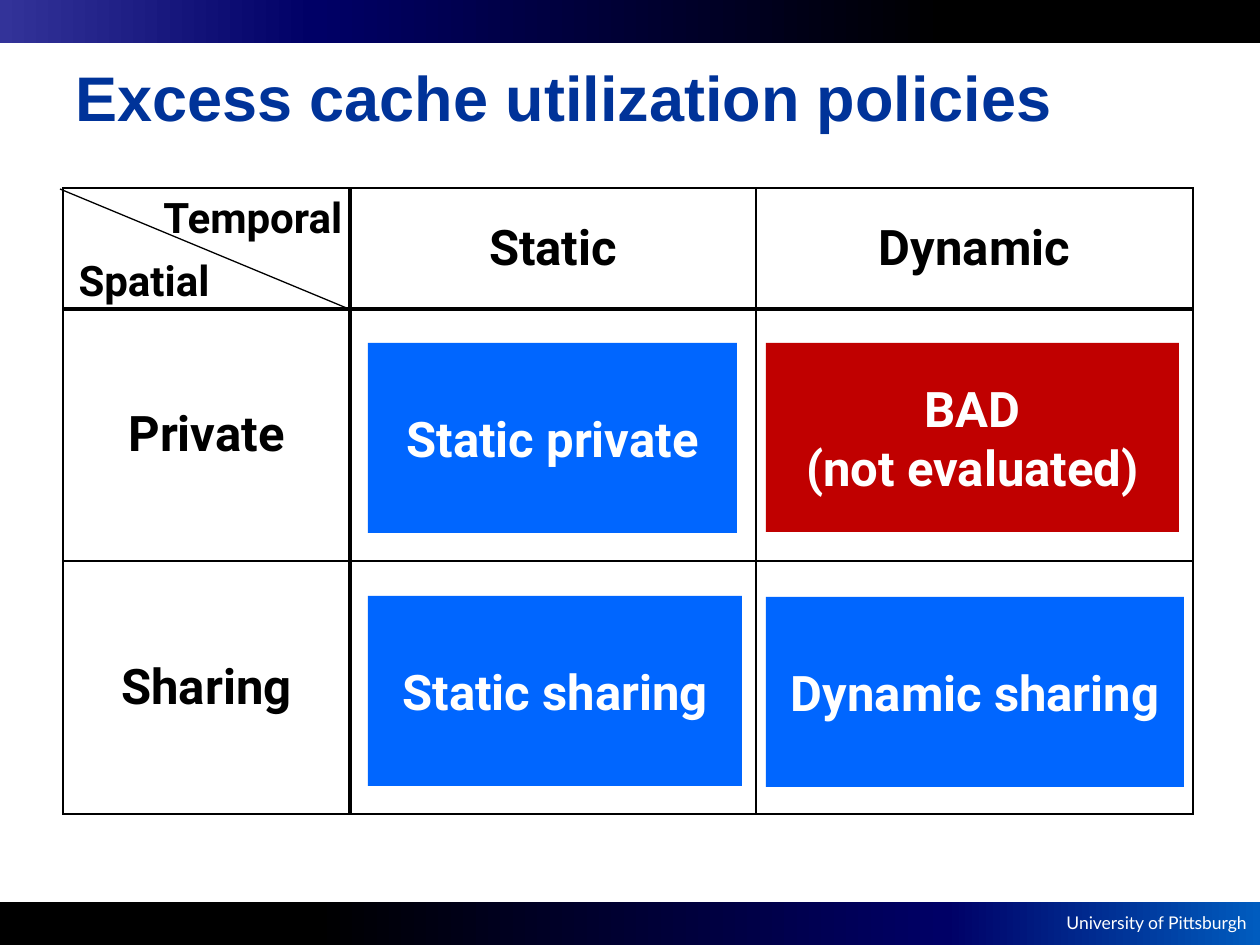
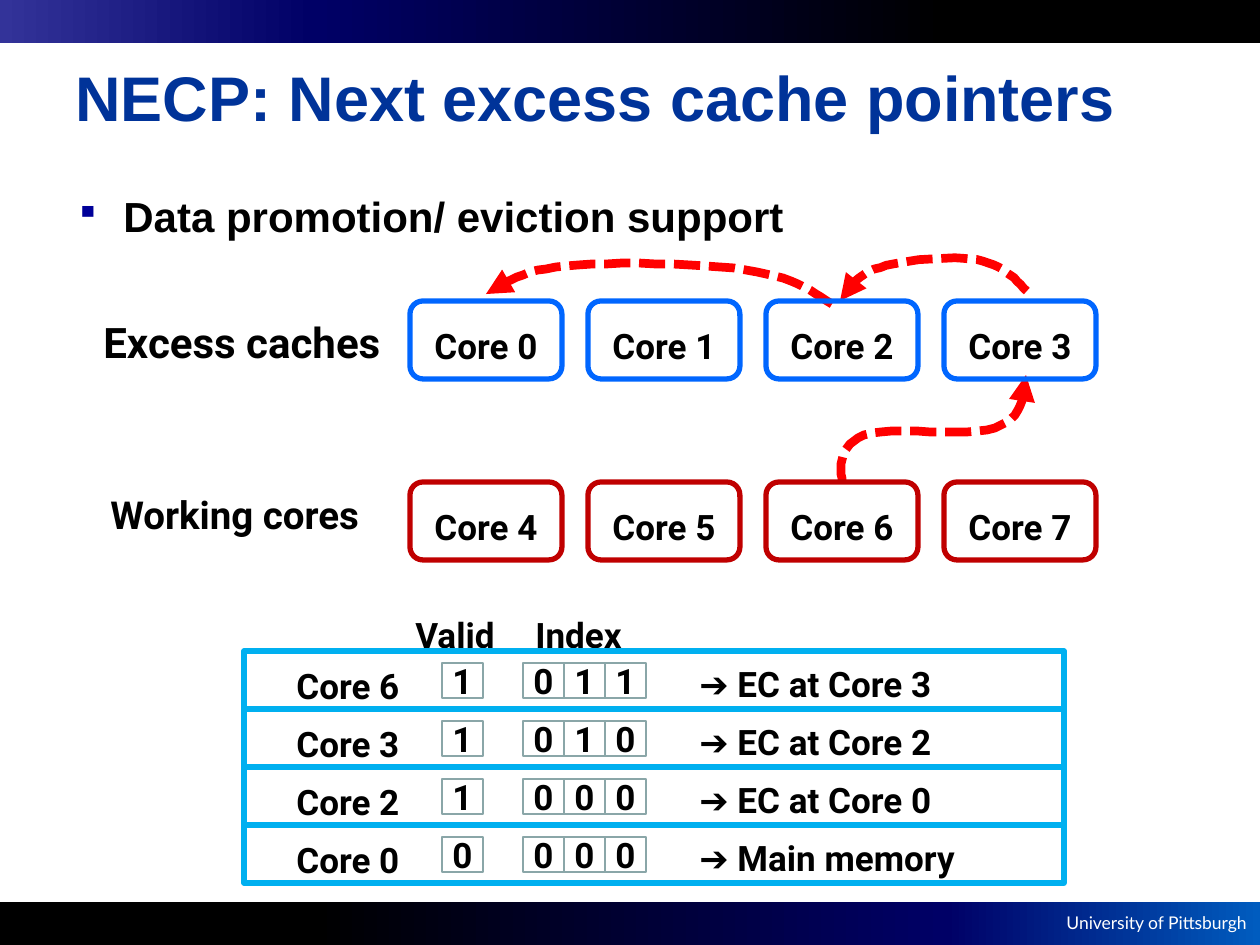
from lxml import etree
from pptx import Presentation
from pptx import util as u
from pptx.dml.color import RGBColor
from pptx.enum import dml, shapes, text
from pptx.oxml import ns

EMU_PER_PX = 914400 / 126
SLIDE_WIDTH, SLIDE_HEIGHT = 1260, 945
BAND_HEIGHT = 43
LABEL_FONT = "Roboto"
CENTER, LEFT, RIGHT = text.PP_ALIGN.CENTER, text.PP_ALIGN.LEFT, text.PP_ALIGN.RIGHT
TOP, MIDDLE = text.MSO_ANCHOR.TOP, text.MSO_ANCHOR.MIDDLE

COLORS = {
    "title": "003399",
    "text": "000000",
    "white": "FFFFFF",
    "bullet": "000099",
    "blue": "0066FF",
    "red": "C00000",
    "pointer": "FF0000",
    "entry": "00B0F0",
    "bit": "8AA6A8",
}
TOP_GRADIENT = [(0, "333399"), (25, "000066"), (75, "000000"), (100, "000000")]
BOTTOM_GRADIENT = [(0, "000000"), (25, "000000"), (75, "000066"), (100, "005CBF")]


def px(length):
    return u.Emu(round(length * EMU_PER_PX))


def box(*lengths):
    return [px(length) for length in lengths]


def rgb(name):
    return RGBColor.from_string(COLORS[name])


def add_element(parent, tag, **attributes):
    return etree.SubElement(parent, ns.qn(tag), attributes)


def write(frame, lines, size, color="text", font=LABEL_FONT, bold=True,
          align=LEFT, anchor=TOP, wrap=True):
    """Fill a text frame with one run per line."""
    frame.word_wrap = wrap
    frame.vertical_anchor = anchor
    for index, line in enumerate(lines.split("\n")):
        paragraph = frame.add_paragraph() if index else frame.paragraphs[0]
        paragraph.alignment = align
        run = paragraph.add_run()
        run.text = line
        run.font.name = font
        run.font.size = u.Pt(size)
        run.font.bold = bold
        run.font.color.rgb = rgb(color)


def add_text(slide, bounds, content, size, **style):
    shape = slide.shapes.add_textbox(*box(*bounds))
    write(shape.text_frame, content, size, **style)
    return shape


def add_box(slide, bounds, fill=None, line=None, width=3,
            kind=shapes.MSO_SHAPE.RECTANGLE):
    shape = slide.shapes.add_shape(kind, *box(*bounds))
    shape.shadow.inherit = False
    if fill:
        shape.fill.solid()
        shape.fill.fore_color.rgb = rgb(fill)
    else:
        shape.fill.background()
    if line:
        shape.line.color.rgb = rgb(line)
        shape.line.width = u.Pt(width)
    else:
        shape.line.fill.background()
    return shape


def add_band(slide, top, stops):
    band = add_box(slide, (0, top, SLIDE_WIDTH, BAND_HEIGHT))
    band.fill.gradient()
    band.fill.gradient_angle = 0
    stop_list = band._element.spPr.find(ns.qn("a:gradFill")).find(ns.qn("a:gsLst"))
    for stop in list(stop_list):
        stop_list.remove(stop)
    for position, color in stops:
        stop = add_element(stop_list, "a:gs", pos=str(position * 1000))
        add_element(stop, "a:srgbClr", val=color)


def add_slide(presentation, title):
    """Add a blank slide with the shared bands, footer and title."""
    slide = presentation.slides.add_slide(presentation.slide_layouts[6])
    add_band(slide, SLIDE_HEIGHT - BAND_HEIGHT, BOTTOM_GRADIENT)
    add_text(slide, (1050, 906, 209, 34), "University of Pittsburgh", 10,
             color="white", font="Lato", bold=False, align=RIGHT, wrap=False)
    add_band(slide, 0, TOP_GRADIENT)
    add_text(slide, (63, 18, 1134, 157), title, 36, color="title",
             font="Arial", anchor=MIDDLE)
    return slide


def set_borders(cell, widths):
    """Draw the left, right, top and bottom borders, widths in points."""
    properties = cell._tc.get_or_add_tcPr()
    for index, (side, width) in enumerate(zip("LRTB", widths)):
        line = add_element(properties, f"a:ln{side}", w=str(u.Pt(width)))
        fill = add_element(line, "a:solidFill")
        add_element(fill, "a:srgbClr", val=COLORS["text"])
        properties.insert(index, line)


def add_policy_table(slide):
    rows = [["", "Static", "Dynamic"], ["Private", "", ""], ["Sharing", "", ""]]
    column_widths, row_heights = [287, 406, 437], [121, 252, 253]
    table = slide.shapes.add_table(
        3, 3, *box(63, 188, sum(column_widths), sum(row_heights))).table
    table.first_row = table.horz_banding = False
    for column, width in zip(table.columns, column_widths):
        column.width = px(width)
    thin, thick = 1, 2.25
    for row, labels in enumerate(rows):
        table.rows[row].height = px(row_heights[row])
        for column, label in enumerate(labels):
            cell = table.cell(row, column)
            cell.fill.background()
            set_borders(cell, [thick if column == 1 else thin,
                               thick if column == 0 else thin,
                               thick if row == 1 else thin,
                               thick if row == 0 else thin])
            if label:
                write(cell.text_frame, label, 28, align=CENTER)
                cell.vertical_anchor = MIDDLE


def add_policy(slide, bounds, label, fill="blue"):
    shape = add_box(slide, bounds, fill=fill)
    write(shape.text_frame, label, 28, color="white", align=CENTER, anchor=MIDDLE)


def add_diagonal(slide, start, end):
    line = slide.shapes.add_connector(
        shapes.MSO_CONNECTOR.STRAIGHT, *box(*start, *end))
    line.line.color.rgb = rgb("text")
    line.line.width = u.Pt(0.75)
    add_element(line._element.spPr, "a:effectLst")


def curve_points(controls, steps=12):
    """Sample a chain of cubic Bezier curves, without its first point."""
    for first in range(0, len(controls) - 1, 3):
        a, b, c, d = controls[first:first + 4]
        for step in range(1, steps + 1):
            t = step / steps
            s = 1 - t
            yield tuple(s**3 * a[i] + 3 * s * s * t * b[i] + 3 * s * t * t * c[i]
                        + t**3 * d[i] for i in (0, 1))


def add_pointer(slide, controls, rotation=0):
    builder = slide.shapes.build_freeform(*controls[0], scale=EMU_PER_PX)
    builder.add_line_segments(curve_points(controls), close=False)
    pointer = builder.convert_to_shape()
    pointer.shadow.inherit = False
    pointer.rotation = rotation
    pointer.fill.background()
    pointer.line.color.rgb = rgb("pointer")
    pointer.line.width = u.Pt(5)
    pointer.line.dash_style = dml.MSO_LINE.SQUARE_DOT
    add_element(pointer._element.spPr.find(ns.qn("a:ln")), "a:tailEnd", type="triangle")


def add_bullet(slide, bounds, content):
    shape = add_text(slide, bounds, content, 24, font="Arial")
    properties = shape.text_frame.paragraphs[0]._p.get_or_add_pPr()
    properties.set("marL", str(px(48)))
    properties.set("indent", str(px(-48)))
    color = add_element(properties, "a:buClr")
    add_element(color, "a:srgbClr", val=COLORS["bullet"])
    add_element(properties, "a:buSzPct", val="80000")
    add_element(properties, "a:buChar", char="▪")


def add_cores(slide, top, first_core, color):
    for index in range(4):
        core = add_box(slide, (410 + 178 * index, top, 152, 78), line=color,
                       kind=shapes.MSO_SHAPE.ROUNDED_RECTANGLE)
        core.text_frame.margin_top = px(18)
        write(core.text_frame, f"Core {first_core + index}", 20,
              align=CENTER, anchor=MIDDLE)


def add_bit(slide, left, top, digit):
    bit = add_box(slide, (left, top, 41, 35), line="bit", width=1.5)
    frame = bit.text_frame
    frame.margin_left = frame.margin_right = 0
    frame.margin_top = frame.margin_bottom = 0
    write(frame, digit, 20, align=CENTER, anchor=MIDDLE)


def add_entry(slide, top, core, valid, index, target):
    """Add one row of the pointer list: core, valid bit, index bits, target."""
    add_box(slide, (244, top, 820, 58), line="entry")
    add_text(slide, (284, top + 7, 140, 55), core, 20)
    add_bit(slide, 442, top + 12, valid)
    for position, digit in enumerate(index):
        add_bit(slide, 523 + 41 * position, top + 12, digit)
    add_text(slide, (687, top + 5, 379, 55), f"➔ {target}", 20)


def build_policies(presentation):
    slide = add_slide(presentation, "Excess cache utilization policies")
    add_policy_table(slide)
    add_text(slide, (147, 185, 212, 63), "Temporal", 24, align=CENTER)
    add_text(slide, (59, 248, 170, 63), "Spatial", 24, align=CENTER)
    add_policy(slide, (368, 343, 369, 190), "Static private")
    add_policy(slide, (766, 597, 418, 190), "Dynamic sharing")
    add_policy(slide, (368, 596, 374, 190), "Static sharing")
    add_policy(slide, (766, 343, 413, 189), "BAD\n(not evaluated)", fill="red")
    add_diagonal(slide, (60, 189), (349, 309))


def build_pointers(presentation):
    slide = add_slide(presentation, "NECP: Next excess cache pointers")
    add_bullet(slide, (63, 184, 1134, 60), "Data promotion/ eviction support")
    add_pointer(slide, [(842, 483), (840, 464), (839, 445), (864, 435), (891, 426),
                        (969, 437), (995, 428), (1022, 418), (1024, 397), (1026, 375)])
    add_pointer(slide, [(1026, 296), (1014, 282), (1002, 268), (978, 262), (954, 257),
                        (903, 258), (881, 265), (857, 270), (848, 284), (839, 296)],
                rotation=-3)
    add_pointer(slide, [(832, 304), (811, 290), (790, 276), (746, 270), (702, 263),
                        (610, 261), (566, 266), (523, 270), (505, 282), (486, 294)])
    add_text(slide, (403, 607, 112, 58), "Valid", 20)
    add_text(slide, (523, 607, 120, 58), "Index", 20)
    entries = [
        ("Core 6", "1", "011", "EC at Core 3"),
        ("Core 3", "1", "010", "EC at Core 2"),
        ("Core 2", "1", "000", "EC at Core 0"),
        ("Core 0", "0", "000", "Main memory"),
    ]
    for row, entry in enumerate(entries):
        add_entry(slide, 651 + 58 * row, *entry)
    add_cores(slide, 482, 4, "red")
    add_cores(slide, 301, 0, "blue")
    add_text(slide, (91, 310, 309, 63), "Excess caches", 24)
    add_text(slide, (98, 485, 312, 59), "Working cores", 22)


def main():
    presentation = Presentation()
    presentation.slide_width = px(SLIDE_WIDTH)
    presentation.slide_height = px(SLIDE_HEIGHT)
    build_policies(presentation)
    build_pointers(presentation)
    presentation.save("out.pptx")


if __name__ == "__main__":
    main()
